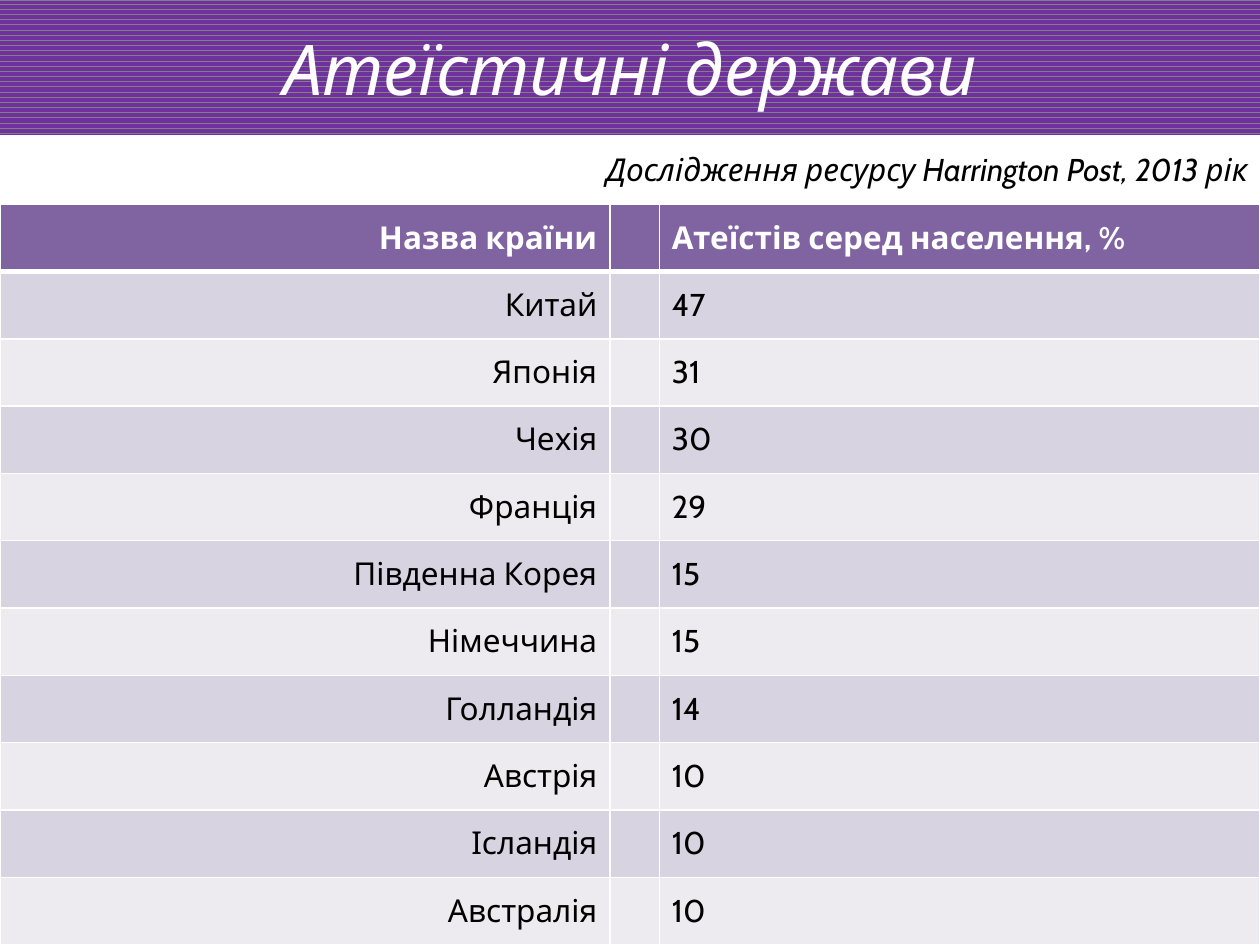
from dataclasses import dataclass

from lxml import etree
from pptx import Presentation
from pptx.dml.color import RGBColor
from pptx.enum.dml import MSO_PATTERN
from pptx.enum.text import MSO_ANCHOR, MSO_AUTO_SIZE, PP_ALIGN
from pptx.oxml.ns import qn
from pptx.table import _Cell
from pptx.text.text import TextFrame
from pptx.util import Pt

LEFT, MID, RIGHT = PP_ALIGN.LEFT, PP_ALIGN.CENTER, PP_ALIGN.RIGHT
CENTER = MSO_ANCHOR.MIDDLE
STRIPES = MSO_PATTERN.DARK_HORIZONTAL
GROW, FIXED = MSO_AUTO_SIZE.SHAPE_TO_FIT_TEXT, MSO_AUTO_SIZE.NONE
FONT = "Cabin"
COLORS = {
    "white": "FFFFFF",
    "black": "000000",
    "violet": "7030A0",
    "gray": "808080",
    "head": "8064A2",
    "dark": "D8D3E0",
    "light": "EDEAF0",
}
WIDTH, HEIGHT = 720, 540
TABLE_TOP = 116.64
COLUMNS = (348.5, 28.3, 343.2)


@dataclass
class Country:
    name: str
    share: int


COUNTRIES = [
    Country("Китай", 47),
    Country("Японія", 31),
    Country("Чехія", 30),
    Country("Франція", 29),
    Country("Південна Корея", 15),
    Country("Німеччина", 15),
    Country("Голландія", 14),
    Country("Австрія", 10),
    Country("Ісландія", 10),
    Country("Австралія", 10),
]


def color(name: str) -> RGBColor:
    return RGBColor.from_string(COLORS[name])


def write(frame: TextFrame, text: str, *, size: float = 18, ink: str = "black",
          align: PP_ALIGN = LEFT, bold: bool = False, italic: bool = False) -> None:
    para = frame.paragraphs[0]
    para.alignment = align
    run = para.add_run()
    run.text = text
    font = run.font
    font.name, font.size = FONT, Pt(size)
    font.bold, font.italic = bold, italic
    font.color.rgb = color(ink)


def border(cell: _Cell, **widths: float) -> None:
    """Draw white cell borders; call before the fill, which must come last."""
    props = cell._tc.get_or_add_tcPr()
    for side, width in widths.items():
        line = etree.SubElement(props, qn(f"a:ln{side}"), w=str(Pt(width)))
        fill = etree.SubElement(line, qn("a:solidFill"))
        etree.SubElement(fill, qn("a:srgbClr"), val=COLORS["white"])


def add_title(slide, text: str) -> None:
    title = slide.shapes.title
    title.left, title.top, title.width, title.height = Pt(0), Pt(0), Pt(WIDTH), Pt(77)
    title.fill.patterned()
    title.fill.pattern = STRIPES
    title.fill.fore_color.rgb = color("violet")
    title.fill.back_color.rgb = color("gray")
    frame = title.text_frame
    frame.auto_size, frame.vertical_anchor = FIXED, CENTER
    write(frame, text, size=40, ink="white", align=MID, italic=True)


def add_table(slide, header: tuple[str, str], rows: list[Country]) -> None:
    lines = [header] + [(row.name, str(row.share)) for row in rows]
    height = HEIGHT - TABLE_TOP
    table = slide.shapes.add_table(len(lines), len(COLUMNS), Pt(0), Pt(TABLE_TOP),
                                   Pt(WIDTH), Pt(height)).table
    for column, width in zip(table.columns, COLUMNS):
        column.width = Pt(width)
    for index, (name, share) in enumerate(lines):
        table.rows[index].height = Pt(height / len(lines))
        head = index == 0
        shade = "head" if head else "dark" if index % 2 else "light"
        ink = "white" if head else "black"
        for cell, text, align in zip(table.rows[index].cells, (name, "", share),
                                     (RIGHT, LEFT, LEFT)):
            border(cell, L=1, R=1, T=3 if index == 1 else 1, B=3 if head else 1)
            cell.fill.solid()
            cell.fill.fore_color.rgb = color(shade)
            cell.vertical_anchor = CENTER
            if text:
                write(cell.text_frame, text, ink=ink, align=align, bold=head)


def add_note(slide, text: str) -> None:
    box = slide.shapes.add_textbox(Pt(0), Pt(82), Pt(WIDTH), Pt(29))
    frame = box.text_frame
    frame.word_wrap, frame.auto_size = True, GROW
    write(frame, text, align=RIGHT, italic=True)


def main() -> None:
    deck = Presentation()
    deck.slide_width, deck.slide_height = Pt(WIDTH), Pt(HEIGHT)
    slide = deck.slides.add_slide(deck.slide_layouts[5])
    add_title(slide, "Атеїстичні держави")
    add_table(slide, ("Назва країни", "Атеїстів серед населення, %"), COUNTRIES)
    add_note(slide, "Дослідження ресурсу Harrington Post, 2013 рік")
    deck.save("out.pptx")


if __name__ == "__main__":
    main()
